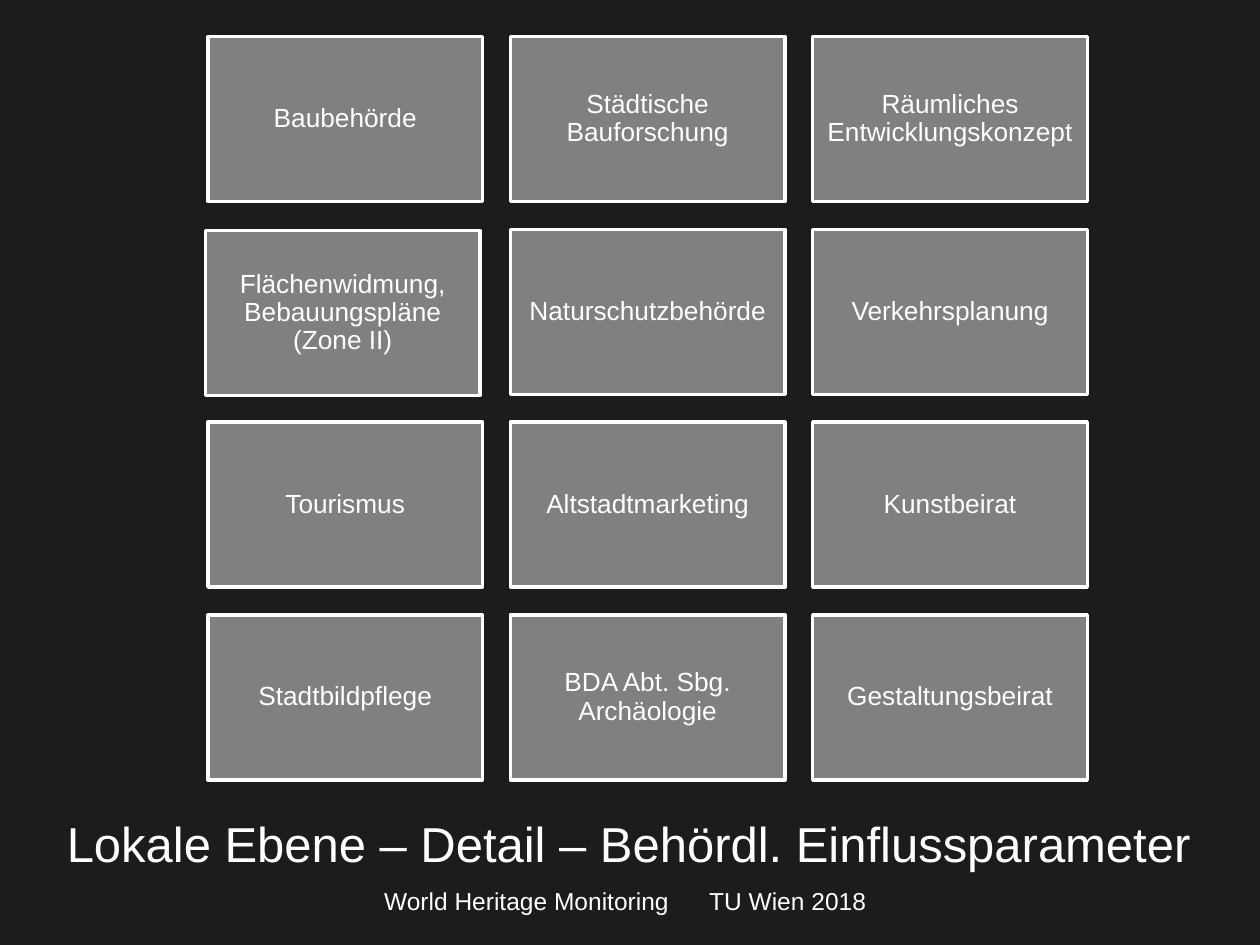
from dataclasses import dataclass

from lxml.etree import SubElement
from pptx import Presentation
from pptx.dml.color import RGBColor
from pptx.enum.shapes import MSO_SHAPE as Shape
from pptx.enum.text import MSO_ANCHOR as Anchor, MSO_AUTO_SIZE as AutoSize, PP_ALIGN as Align
from pptx.oxml.ns import qn
from pptx.util import Inches, Pt


@dataclass(frozen=True)
class Theme:
    background: RGBColor = RGBColor(0x1C, 0x1C, 0x1C)
    box: RGBColor = RGBColor(0x80, 0x80, 0x80)
    white: RGBColor = RGBColor(0xFF, 0xFF, 0xFF)
    font: str = "Arial"
    title: int = 28
    label: int = 15
    footer: int = 14


theme = Theme()


def write(tf, text, size, align=Align.LEFT, anchor=Anchor.TOP, inset=None, spacing=1.0, tabs=()):
    tf.word_wrap = True
    tf.auto_size = AutoSize.NONE
    tf.vertical_anchor = anchor
    if inset is not None:
        tf.margin_left = tf.margin_right = tf.margin_top = tf.margin_bottom = Inches(inset)
    p = tf.paragraphs[0]
    p.alignment = align
    p.line_spacing = spacing
    if tabs:
        tab_list = SubElement(p._p.get_or_add_pPr(), qn("a:tabLst"))
        for pos in tabs:
            SubElement(tab_list, qn("a:tab"), pos=str(Inches(pos)), algn="l")
    r = p.add_run()
    r.text = text
    r.font.name = theme.font
    r.font.size = Pt(size)
    r.font.color.rgb = theme.white


prs = Presentation()
prs.slide_width, prs.slide_height = Inches(10), Inches(7.5)
s = prs.slides.add_slide(prs.slide_layouts[5])
s.background.fill.solid()
s.background.fill.fore_color.rgb = theme.background

footer = s.shapes.add_textbox(Inches(1.06), Inches(6.98), Inches(7.8), Inches(0.24))
write(footer.text_frame, "\tWorld Heritage Monitoring\tTU Wien 2018", theme.footer, tabs=(1.89, 4.47))

authorities = [
    ["Baubehörde", "Städtische Bauforschung", "Räumliches Entwicklungskonzept"],
    ["Flächenwidmung, Bebauungspläne (Zone II)", "Naturschutzbehörde", "Verkehrsplanung"],
    ["Tourismus", "Altstadtmarketing", "Kunstbeirat"],
    ["Stadtbildpflege", "BDA Abt. Sbg. Archäologie", "Gestaltungsbeirat"],
]
left, top, width, height = 1.65, 0.29, 2.18, 1.31
step_x, step_y = 2.4, 1.53
nudges = {(1, 0): (-0.02, 0.01)}

for row, labels in enumerate(authorities):
    for col, label in enumerate(labels):
        dx, dy = nudges.get((row, col), (0, 0))
        x, y = left + col * step_x + dx, top + row * step_y + dy
        sp = s.shapes.add_shape(Shape.RECTANGLE, Inches(x), Inches(y), Inches(width), Inches(height))
        sp.shadow.inherit = False
        sp.fill.solid()
        sp.fill.fore_color.rgb = theme.box
        sp.line.color.rgb = theme.white
        sp.line.width = Pt(2)
        write(sp.text_frame, label, theme.label, Align.CENTER, Anchor.MIDDLE, inset=0.06, spacing=0.9)

title = s.shapes.title
title.left, title.top, title.width, title.height = Inches(0.43), Inches(6.41), Inches(9.45), Inches(0.57)
write(title.text_frame, "Lokale Ebene – Detail – Behördl. Einflussparameter", theme.title)

prs.save("out.pptx")
